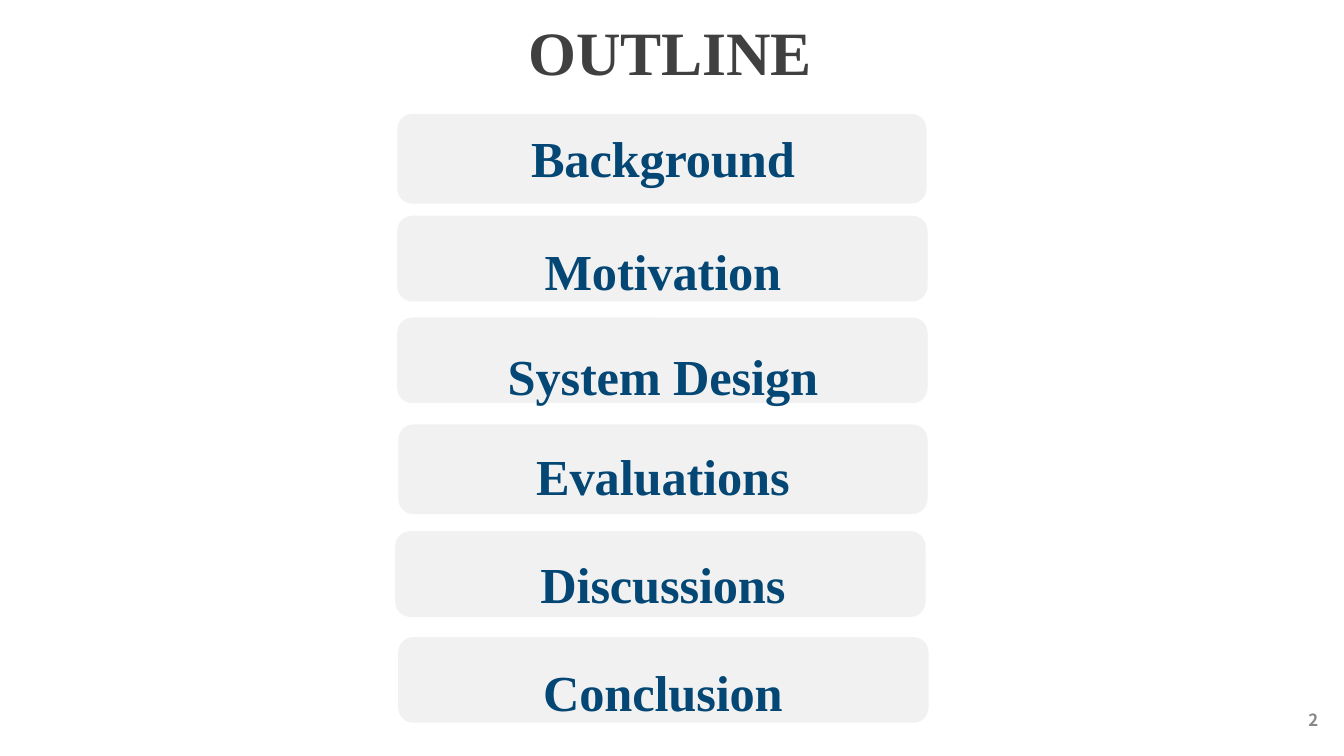
from lxml import etree
from pptx import Presentation
from pptx.dml.color import RGBColor
from pptx.enum import shapes, text
from pptx.oxml.ns import qn
from pptx.util import Inches, Pt

HEAD = "OUTLINE"
PAGE = "2"
# topic, space before in points, card left, top, width, height in inches
TOPICS = [
    ("Background", 1, 3.94, 1.13, 5.25, 0.89),
    ("Motivation", 37.9, 3.94, 2.14, 5.26, 0.85),
    ("System Design", 31.5, 3.94, 3.15, 5.26, 0.85),
    ("Evaluations", 27.9, 3.95, 4.21, 5.25, 0.89),
    ("Discussions", 34.3, 3.92, 5.27, 5.26, 0.85),
    ("Conclusion", 33.6, 3.95, 6.32, 5.26, 0.85),
]
COLORS = {"head": "404040", "topic": "044775", "card": "F1F1F1", "page": "888888"}
SERIF, SANS = "Times New Roman", "Noto Sans CJK SC"
RADIUS = 0.15


def hue(name):
    return RGBColor.from_string(COLORS[name])


def place(shape, left, top, width, height):
    shape.left, shape.top = Inches(left), Inches(top)
    shape.width, shape.height = Inches(width), Inches(height)


def setup(shape, inset):
    """Anchor the text at the top with only a small top margin."""
    frame = shape.text_frame
    frame.word_wrap = True
    frame.auto_size = text.MSO_AUTO_SIZE.NONE
    frame.vertical_anchor = text.MSO_ANCHOR.TOP
    frame.margin_left = frame.margin_right = frame.margin_bottom = 0
    frame.margin_top = Inches(inset)
    return frame


def write(para, words, size, font, color, align, before=0, track=0):
    para.alignment = align
    para.space_before = Pt(before)
    run = para.add_run()
    run.text = words
    run.font.size, run.font.name, run.font.bold = Pt(size), font, True
    run.font.color.rgb = hue(color)
    if track:
        run.font._element.set("spc", str(track))


def plain(para):
    """Drop the bullet and the hanging indent."""
    props = para._p.get_or_add_pPr()
    props.set("marL", "0")
    props.set("indent", "0")
    etree.SubElement(props, qn("a:buNone"))


def main():
    deck = Presentation()
    deck.slide_width, deck.slide_height = Inches(13.33), Inches(7.5)
    slide = deck.slides.add_slide(deck.slide_layouts[1])
    title, body = slide.shapes.title, slide.placeholders[1]

    place(title, 5.24, 0.11, 2.85, 0.76)
    write(setup(title, 0.03).paragraphs[0], HEAD, 44, SERIF, "head",
          text.PP_ALIGN.LEFT, 1, -10)

    place(body, 5.01, 1.24, 3.13, 5.8)
    frame = setup(body, 0.02)
    for i, (topic, before, *box) in enumerate(TOPICS):
        card = slide.shapes.add_shape(shapes.MSO_SHAPE.ROUNDED_RECTANGLE,
                                      *map(Inches, box))
        card.adjustments[0] = RADIUS / box[3]
        card.shadow.inherit = False
        card.fill.solid()
        card.fill.fore_color.rgb = hue("card")
        card.line.fill.background()
        body._element.addprevious(card._element)  # cards lie behind the list

        para = frame.add_paragraph() if i else frame.paragraphs[0]
        write(para, topic, 36, SERIF, "topic", text.PP_ALIGN.CENTER, before, -10)
        plain(para)

    page = slide.shapes.add_textbox(*map(Inches, (12.93, 7.06, 0.19, 0.2)))
    para = setup(page, 0).paragraphs[0]
    write(para, PAGE, 12, SANS, "page", text.PP_ALIGN.CENTER)
    para.line_spacing = Pt(13.1)

    deck.save("out.pptx")


if __name__ == "__main__":
    main()
